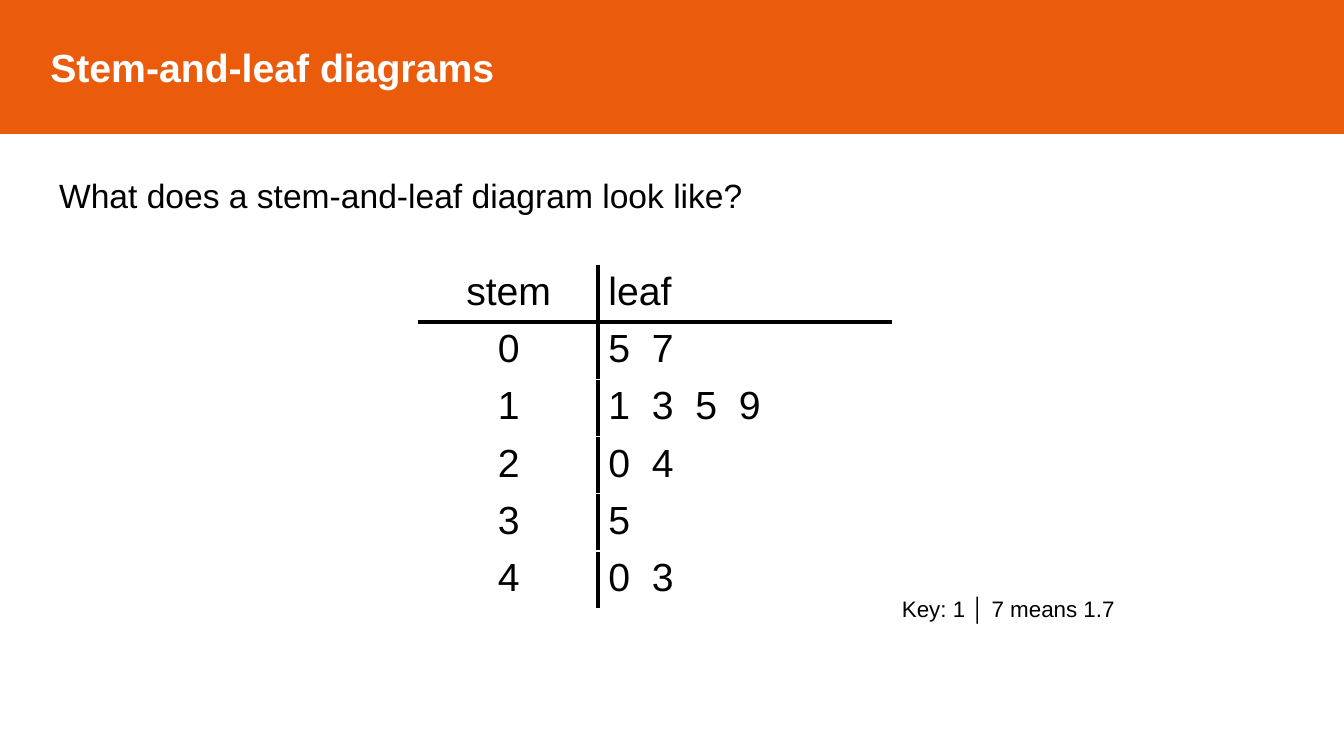
"""Build a slide that shows what a stem-and-leaf diagram looks like."""
from dataclasses import dataclass

from lxml.etree import SubElement
from pptx import Presentation
from pptx.dml.color import RGBColor
from pptx.enum.shapes import MSO_SHAPE as Shape
from pptx.enum.text import MSO_ANCHOR as Anchor, MSO_AUTO_SIZE as AutoSize, PP_ALIGN as Align
from pptx.oxml.ns import qn
from pptx.slide import Slide
from pptx.table import _Cell as Cell
from pptx.text.text import _Paragraph as Paragraph
from pptx.util import Cm, Pt

COLORS = {"banner": "EA5B0C", "paper": "FFFFFF", "ink": "000000"}
FONT = "Arial"
LEAF_GAP = "  "
COLUMN_WIDTHS = (4.52, 7.39)
ROW_HEIGHT = 1.44
HEAVY, LIGHT = ("ink", 3), ("paper", 1)


@dataclass(frozen=True)
class Span:
    text: str
    bold: bool = False


@dataclass(frozen=True)
class Caption:
    left: float
    top: float
    width: float
    height: float
    size: int
    spans: tuple[Span, ...]


@dataclass(frozen=True)
class StemRow:
    stem: str
    leaves: tuple[str, ...]


CAPTIONS = (
    Caption(1.24, 4.29, 32, 1.27, 24, (Span("What does a stem-and-leaf diagram look like?"),)),
    Caption(22.48, 14.86, 10.59, 0.94, 16,
            (Span("Key: 1 "), Span("│", True), Span(" 7 means 1.7"))),
)
STEM_ROWS = (
    StemRow("stem", ("leaf",)),
    StemRow("0", ("5", "7")),
    StemRow("1", ("1", "3", "5", "9")),
    StemRow("2", ("0", "4")),
    StemRow("3", ("5",)),
    StemRow("4", ("0", "3")),
)


def color(name: str) -> RGBColor:
    return RGBColor.from_string(COLORS[name])


def add_span(para: Paragraph, span: Span, size: int, ink: str = "ink") -> None:
    run = para.add_run()
    run.text = span.text
    run.font.name = FONT
    run.font.size = Pt(size)
    run.font.bold = span.bold
    run.font.color.rgb = color(ink)


def add_banner(page: Slide, title: str, width: int) -> None:
    banner = page.shapes.add_shape(Shape.RECTANGLE, 0, 0, width, Cm(3.36))
    banner.shadow.inherit = False
    banner.fill.solid()
    banner.fill.fore_color.rgb = color("banner")
    banner.line.color.rgb = color("banner")
    banner.line.width = Pt(1)
    frame = banner.text_frame
    frame.vertical_anchor = Anchor.MIDDLE
    frame.margin_left = Cm(1.27)
    para = frame.paragraphs[0]
    para.alignment = Align.LEFT
    add_span(para, Span(title, True), 28, "paper")


def add_caption(page: Slide, caption: Caption) -> None:
    box = page.shapes.add_textbox(
        Cm(caption.left), Cm(caption.top), Cm(caption.width), Cm(caption.height))
    box.text_frame.word_wrap = True
    box.text_frame.auto_size = AutoSize.SHAPE_TO_FIT_TEXT
    for span in caption.spans:
        add_span(box.text_frame.paragraphs[0], span, caption.size)


def set_borders(cell: Cell, **borders: tuple[str, int]) -> None:
    properties = cell._tc.get_or_add_tcPr()
    for position, side in enumerate("LRTB"):
        name, points = borders.get(side, LIGHT)
        line = properties.makeelement(qn(f"a:ln{side}"), {"w": str(Pt(points))})
        fill = SubElement(line, qn("a:solidFill"))
        SubElement(fill, qn("a:srgbClr"), val=COLORS[name])
        properties.insert(position, line)


def add_diagram(page: Slide) -> None:
    frame = page.shapes.add_table(
        len(STEM_ROWS), len(COLUMN_WIDTHS), Cm(10.56), Cm(6.68),
        Cm(sum(COLUMN_WIDTHS)), Cm(ROW_HEIGHT * len(STEM_ROWS)))
    table = frame.table
    table.first_row = table.horz_banding = False
    for column, width in zip(table.columns, COLUMN_WIDTHS):
        column.width = Cm(width)
    for index, entry in enumerate(STEM_ROWS):
        table.rows[index].height = Cm(ROW_HEIGHT)
        rules = {0: {"B": HEAVY}, 1: {"T": HEAVY}}.get(index, {})
        columns = (
            (entry.stem, Align.CENTER, "R"),
            (LEAF_GAP.join(entry.leaves), Align.LEFT, "L"),
        )
        for cell, (text, alignment, inner_side) in zip(table.rows[index].cells, columns):
            cell.fill.background()
            set_borders(cell, **rules, **{inner_side: HEAVY})
            para = cell.text_frame.paragraphs[0]
            para.alignment = alignment
            add_span(para, Span(text), 28)


def main() -> None:
    deck = Presentation()
    deck.slide_width, deck.slide_height = Cm(33.87), Cm(19.05)
    page = deck.slides.add_slide(deck.slide_layouts[6])
    add_banner(page, "Stem-and-leaf diagrams", deck.slide_width)
    for caption in CAPTIONS:
        add_caption(page, caption)
    add_diagram(page)
    deck.save("out.pptx")


if __name__ == "__main__":
    main()
